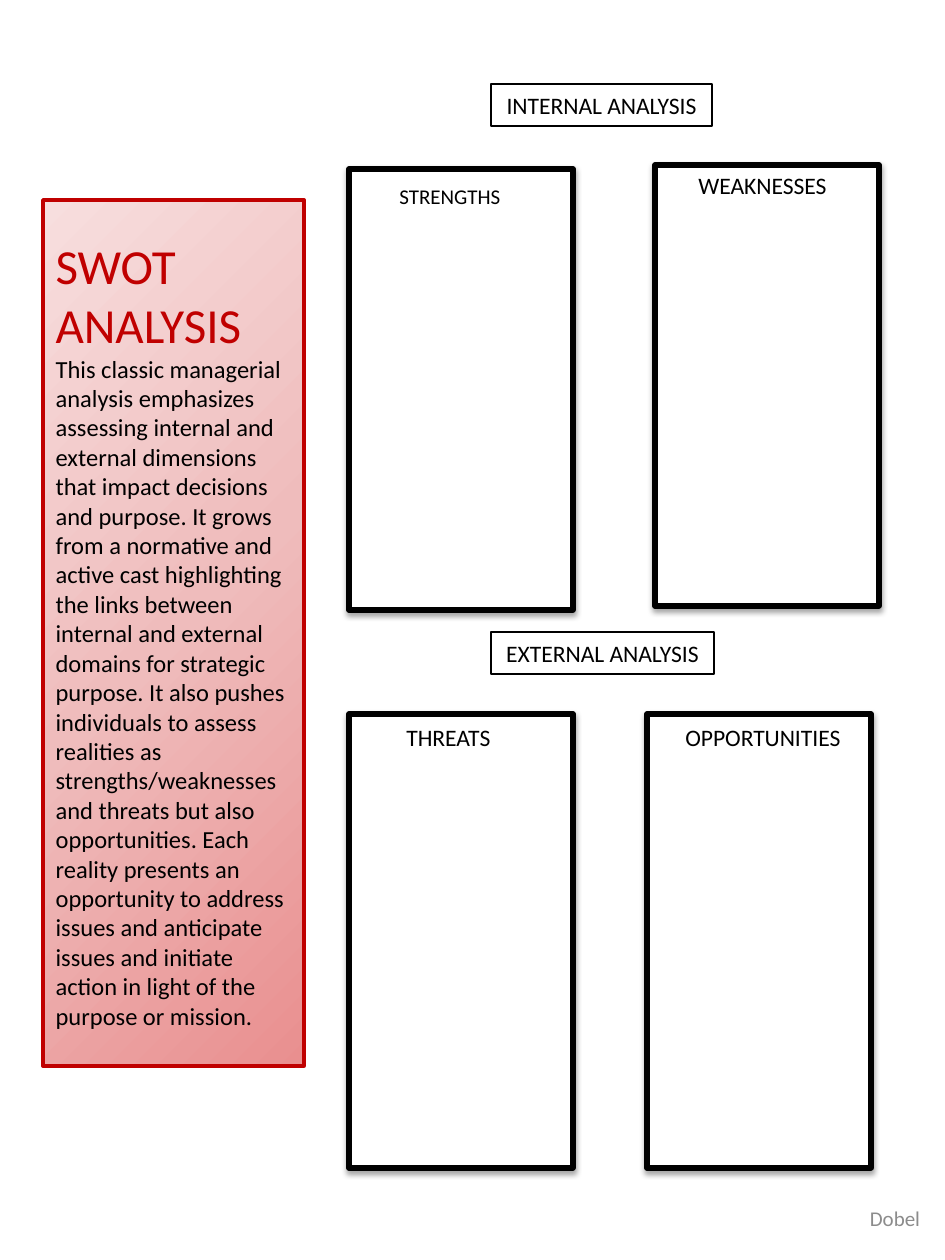
"""Build a one-page SWOT analysis worksheet."""
from lxml.etree import SubElement
from pptx import Presentation
from pptx.dml.color import RGBColor
from pptx.enum.shapes import MSO_SHAPE
from pptx.enum.text import MSO_ANCHOR, MSO_AUTO_SIZE, PP_ALIGN
from pptx.oxml import parse_xml
from pptx.oxml.ns import nsdecls, qn
from pptx.util import Pt

PX = 914400 / 126
COLORS = {"black": "000000", "white": "FFFFFF", "red": "C00000", "gray": "8C8C8C",
          "rose": "E98F8F", "pink": "EFBCBC", "blush": "F7DEDE"}
DESCRIPTION = (
    "This classic managerial analysis emphasizes assessing internal and external "
    "dimensions that impact decisions and purpose. It grows from a normative and "
    "active cast highlighting the links between internal and external domains for "
    "strategic purpose. It also pushes individuals to assess realities as "
    "strengths/weaknesses and threats but also opportunities. Each reality presents "
    "an opportunity to address issues and anticipate issues and initiate action in "
    "light of the purpose or mission.")


def box(*lengths):
    return [round(length * PX) for length in lengths]


def add_run(paragraph, text, size, color):
    run = paragraph.add_run()
    run.text = text
    run.font.name = "Calibri"
    run.font.size = Pt(size)
    run.font.color.rgb = RGBColor.from_string(COLORS[color])


presentation = Presentation()
presentation.slide_width, presentation.slide_height = box(945, 1260)
slide = presentation.slides.add_slide(presentation.slide_layouts[5])

title = slide.shapes.title
title.left, title.top, title.width, title.height = box(43, 200, 261, 866)
title.line.color.rgb = RGBColor.from_string(COLORS["red"])
title.line.width = Pt(2)
stops = "".join(
    f'<a:gs pos="{position}"><a:srgbClr val="{COLORS[name]}"/></a:gs>'
    for position, name in ((0, "rose"), (50000, "pink"), (100000, "blush")))
title.line._ln.addprevious(parse_xml(
    f'<a:gradFill {nsdecls("a")} rotWithShape="1"><a:gsLst>{stops}</a:gsLst>'
    '<a:path path="circle"><a:fillToRect l="100000" t="100000"/></a:path></a:gradFill>'))
frame = title.text_frame
frame.word_wrap = True
frame.auto_size = MSO_AUTO_SIZE.NONE
frame.vertical_anchor = MSO_ANCHOR.MIDDLE
paragraph = frame.paragraphs[0]
paragraph.alignment = PP_ALIGN.LEFT
add_run(paragraph, "SWOT ANALYSIS", 28, "red")
paragraph.add_line_break()
SubElement(paragraph._p.find(qn("a:br")), qn("a:rPr"), sz="2800")
add_run(paragraph, DESCRIPTION, 14, "black")

for left, top, height in ((349, 169, 441), (349, 714, 454), (647, 714, 454), (655, 165, 441)):
    quadrant = slide.shapes.add_shape(MSO_SHAPE.RECTANGLE, *box(left, top, 224, height))
    quadrant.fill.solid()
    quadrant.fill.fore_color.rgb = RGBColor.from_string(COLORS["white"])
    quadrant.line.color.rgb = RGBColor.from_string(COLORS["black"])
    quadrant.line.width = Pt(3)
    quadrant.shadow.inherit = False
    effects = quadrant._element.spPr.find(qn("a:effectLst"))
    effects.append(parse_xml(
        f'<a:outerShdw {nsdecls("a")} blurRad="40000" dist="23000" dir="5400000" rotWithShape="0">'
        f'<a:srgbClr val="{COLORS["black"]}"><a:alpha val="35000"/></a:srgbClr></a:outerShdw>'))

for text, left, top, width, outline in (
        ("INTERNAL ANALYSIS", 491, 84, 221, 0.75), ("EXTERNAL ANALYSIS", 491, 632, 223, 1.5)):
    heading = slide.shapes.add_shape(MSO_SHAPE.RECTANGLE, *box(left, top, width, 42))
    heading.fill.background()
    heading.line.color.rgb = RGBColor.from_string(COLORS["black"])
    heading.line.width = Pt(outline)
    heading.shadow.inherit = False
    heading.text_frame.word_wrap = False
    heading.text_frame.paragraphs[0].alignment = PP_ALIGN.CENTER
    add_run(heading.text_frame.paragraphs[0], text, 13.5, "black")

for text, left, top, width, height, size in (
        ("STRENGTHS", 387, 177, 127, 38, 12), ("WEAKNESSES", 686, 165, 156, 42, 13.5),
        ("OPPORTUNITIES", 673, 717, 183, 42, 13.5), ("THREATS", 394, 717, 113, 42, 13.5)):
    label = slide.shapes.add_textbox(*box(left, top, width, height))
    label.text_frame.word_wrap = False
    label.text_frame.auto_size = MSO_AUTO_SIZE.SHAPE_TO_FIT_TEXT
    add_run(label.text_frame.paragraphs[0], text, size, "black")

footer = slide.shapes.add_textbox(*box(853, 1185, 84, 67))
footer.text_frame.word_wrap = True
footer.text_frame.vertical_anchor = MSO_ANCHOR.MIDDLE
footer.text_frame.paragraphs[0].alignment = PP_ALIGN.CENTER
add_run(footer.text_frame.paragraphs[0], "Dobel", 12, "gray")

presentation.save("out.pptx")
